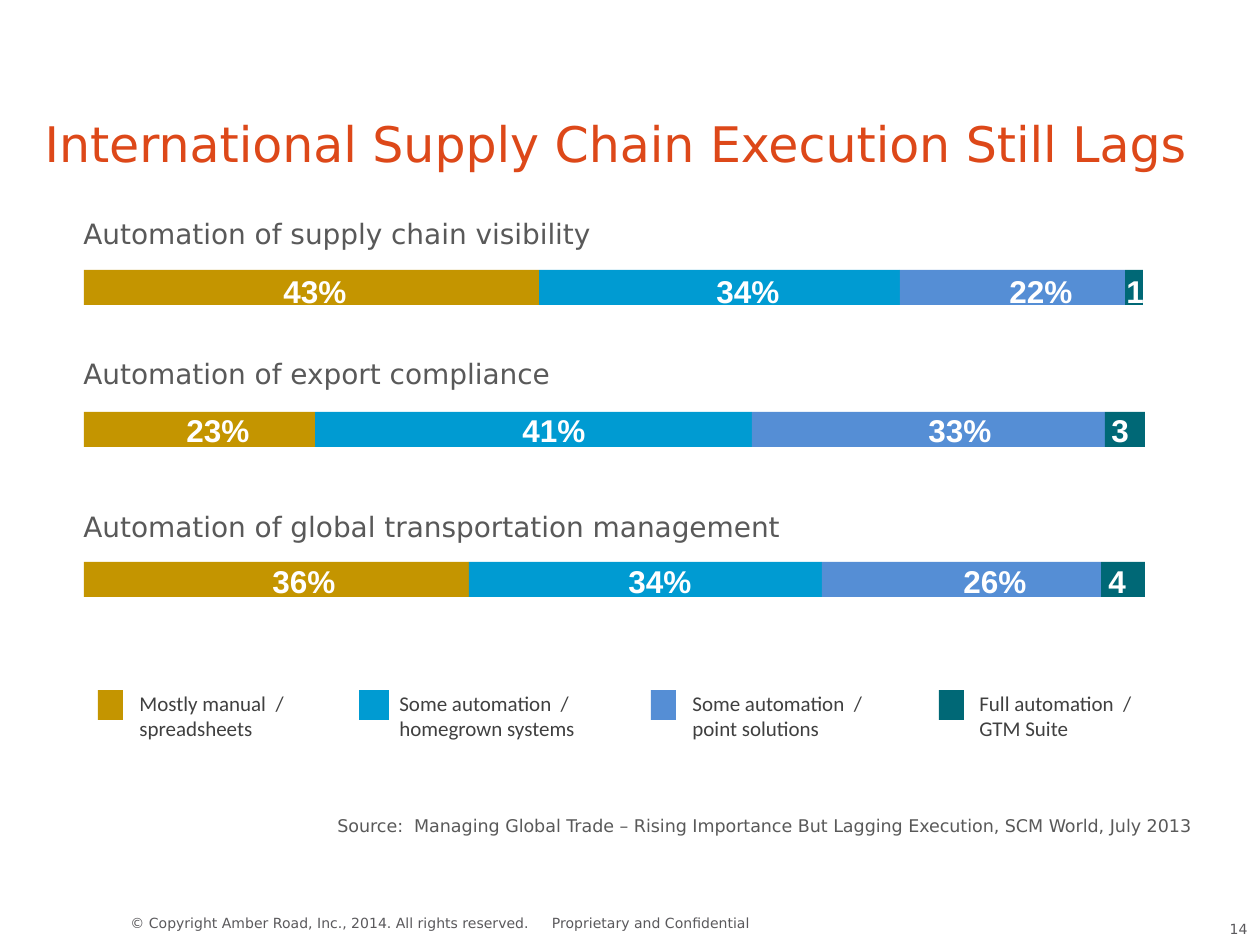
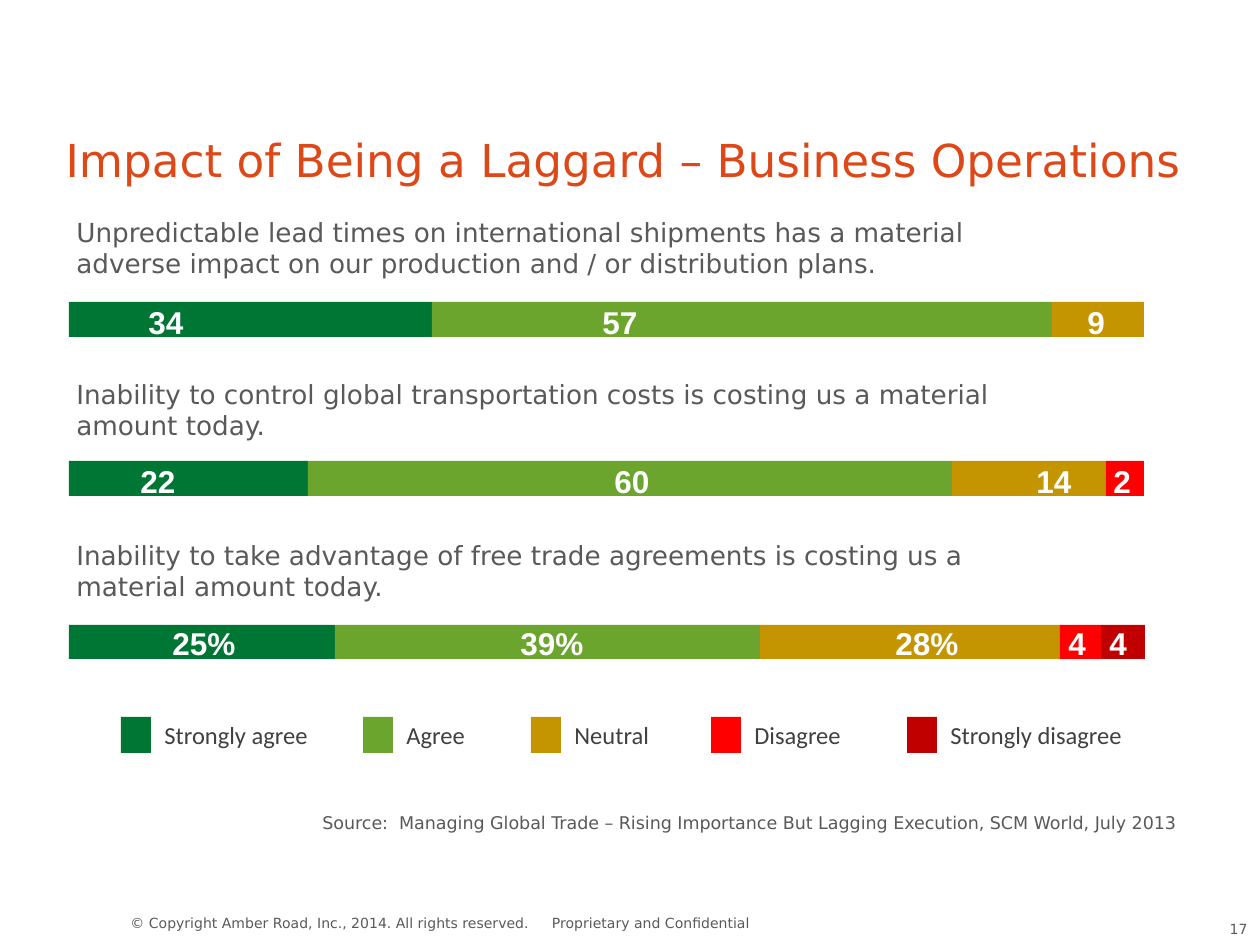
from dataclasses import dataclass
from itertools import pairwise

from pptx import Presentation
from pptx import util as u
from pptx.dml.color import RGBColor
from pptx.enum import shapes, text


def px(length):
    return u.Emu(round(length * 914400 / 126))


@dataclass(frozen=True)
class Theme:
    body_font: str = "DejaVu Sans"
    value_font: str = "Arial"
    legend_font: str = "Calibri"
    title_color: str = "DD4819"
    body_color: str = "595959"
    footer_color: str = "5A595C"
    legend_color: str = "404040"
    value_color: str = "FFFFFF"
    gold: str = "C49500"
    cyan: str = "009BD2"
    blue: str = "558ED5"
    teal: str = "006876"
    dark_green: str = "007635"
    green: str = "6CA52D"
    red: str = "FF0000"
    dark_red: str = "C00000"
    value_size: int = 18
    source_size: int = 10
    footer_size: int = 8


THEME = Theme()
AUTOMATION_COLORS = (THEME.gold, THEME.cyan, THEME.blue, THEME.teal)
AGREEMENT_COLORS = (THEME.dark_green, THEME.green, THEME.gold, THEME.red, THEME.dark_red)
VALUE_WIDTHS = {1: 45, 2: 67, 3: 90}
SOURCE = ("Source:  Managing Global Trade – Rising Importance But Lagging Execution, "
          "SCM World, July 2013")
COPYRIGHT = "© Copyright Amber Road, Inc., 2014. All rights reserved."


@dataclass(frozen=True)
class Row:
    heading: str
    heading_top: int
    bar_top: int
    edges: tuple
    values: tuple
    value_lefts: tuple
    value_rise: int
    bar_height: int = 35


def place(shape, box):
    shape.left, shape.top, shape.width, shape.height = map(px, box)


def style_text(shape, words, font, size, color, bold=False, align=text.PP_ALIGN.LEFT):
    frame = shape.text_frame
    frame.text = words
    frame.word_wrap = True
    para = frame.paragraphs[0]
    para.alignment = align
    for span in para.runs:
        span.font.name = font
        span.font.size = u.Pt(size)
        span.font.bold = bold
        span.font.color.rgb = RGBColor.from_string(color)
    return frame


def add_text(page, box, words, font, size, color, **options):
    label = page.shapes.add_textbox(*map(px, box))
    return style_text(label, words, font, size, color, **options)


def add_block(page, box, color):
    block = page.shapes.add_shape(shapes.MSO_SHAPE.RECTANGLE, *map(px, box))
    block.shadow.inherit = False
    block.fill.solid()
    block.fill.fore_color.rgb = RGBColor.from_string(color)
    block.line.fill.background()


def add_title(page, box, words, size):
    title = page.shapes.title
    place(title, box)
    frame = style_text(title, words, THEME.body_font, size, THEME.title_color)
    frame.auto_size = text.MSO_AUTO_SIZE.NONE
    frame.vertical_anchor = text.MSO_ANCHOR.MIDDLE
    frame.margin_bottom = 0


def add_footer(page, number):
    style = (THEME.body_font, THEME.footer_size, THEME.footer_color)
    add_text(page, (118, 908, 451, 29), COPYRIGHT, *style)
    notice = add_text(page, (418, 915, 466, 29), "Proprietary and Confidential", *style,
                      align=text.PP_ALIGN.CENTER)
    notice.margin_top = notice.margin_bottom = 0
    add_text(page, (1201, 914, 59, 31), str(number), *style, align=text.PP_ALIGN.RIGHT)


def add_row(page, row, heading_box, heading_size, colors):
    left, width, height = heading_box
    add_text(page, (left, row.heading_top, width, height), row.heading,
             THEME.body_font, heading_size, THEME.body_color)
    for (start, end), color in zip(pairwise(row.edges), colors):
        add_block(page, (start, row.bar_top, end - start, row.bar_height), color)
    for value, value_left in zip(row.values, row.value_lefts):
        box = (value_left, row.bar_top - row.value_rise, VALUE_WIDTHS[len(value)], 50)
        add_text(page, box, value, THEME.value_font, THEME.value_size,
                 THEME.value_color, bold=True)


def add_legend(page, top, swatch_height, text_rise, text_size, entries, colors):
    for (left, swatch_width, text_left, text_width, words), color in zip(entries, colors):
        add_block(page, (left, top, swatch_width, swatch_height), color)
        add_text(page, (text_left, top - text_rise, text_width, 43), words,
                 THEME.legend_font, text_size, THEME.legend_color)


def add_survey_page(deck, number, title, rows, heading, legend, source_at, colors):
    page = deck.slides.add_slide(deck.slide_layouts[5])
    add_footer(page, number)
    add_title(page, *title)
    for row in rows:
        add_row(page, row, *heading, colors)
    add_legend(page, *legend, colors)
    add_text(page, (*source_at, 912, 34), SOURCE,
             THEME.body_font, THEME.source_size, THEME.body_color)


def add_automation_page(deck):
    rows = (
        Row("Automation of supply chain visibility", 210, 270,
            (84, 539, 900, 1125, 1143), ("43%", "34%", "22%", "1"),
            (271, 704, 997, 1114), 4),
        Row("Automation of export compliance", 350, 412,
            (84, 315, 752, 1105, 1145), ("23%", "41%", "33%", "3"),
            (174, 510, 916, 1099), 7),
        Row("Automation of global transportation management", 503, 562,
            (84, 469, 822, 1101, 1145), ("36%", "34%", "26%", "4"),
            (260, 616, 951, 1096), 6),
    )
    entries = (
        (98, 25, 127, 210, "Mostly manual  / spreadsheets"),
        (359, 30, 387, 210, "Some automation  / homegrown systems"),
        (651, 25, 680, 210, "Some automation  / point solutions"),
        (939, 25, 967, 210, "Full automation  / GTM Suite"),
    )
    add_survey_page(
        deck, 14,
        ((32, 94, 1198, 91), "International Supply Chain Execution Still Lags", 28),
        rows, ((71, 916, 47), 16), (690, 30, 6, 12, entries), (325, 809),
        AUTOMATION_COLORS)


def add_agreement_page(deck):
    rows = (
        Row("Unpredictable lead times on international shipments has a material "
            "adverse impact on our production and / or distribution plans.", 210, 302,
            (69, 432, 1052, 1144), ("34", "57", "9"),
            (136, 590, 1075), 5),
        Row("Inability to control global transportation costs is costing us "
            "a material amount today.", 372, 461,
            (69, 308, 952, 1106, 1144), ("22", "60", "14", "2"),
            (128, 602, 1024, 1101), 5),
        Row("Inability to take advantage of free trade agreements is costing us "
            "a material amount today.", 533, 625,
            (69, 335, 760, 1060, 1101, 1145), ("25%", "39%", "28%", "4", "4"),
            (160, 508, 883, 1056, 1097), 7, bar_height=34),
    )
    entries = (
        (121, 30, 152, 170, "Strongly agree"),
        (363, 30, 394, 170, "Agree"),
        (531, 30, 562, 170, "Neutral"),
        (711, 30, 742, 170, "Disagree"),
        (907, 30, 938, 202, "Strongly disagree"),
    )
    add_survey_page(
        deck, 17,
        ((53, 104, 1176, 105), "Impact of Being a Laggard – Business Operations", 25.9),
        rows, ((64, 955, 77), 15), (717, 36, 3, 14, entries), (310, 806),
        AGREEMENT_COLORS)


def main():
    deck = Presentation()
    deck.slide_width, deck.slide_height = px(1260), px(945)
    add_automation_page(deck)
    add_agreement_page(deck)
    deck.save("out.pptx")


if __name__ == "__main__":
    main()
